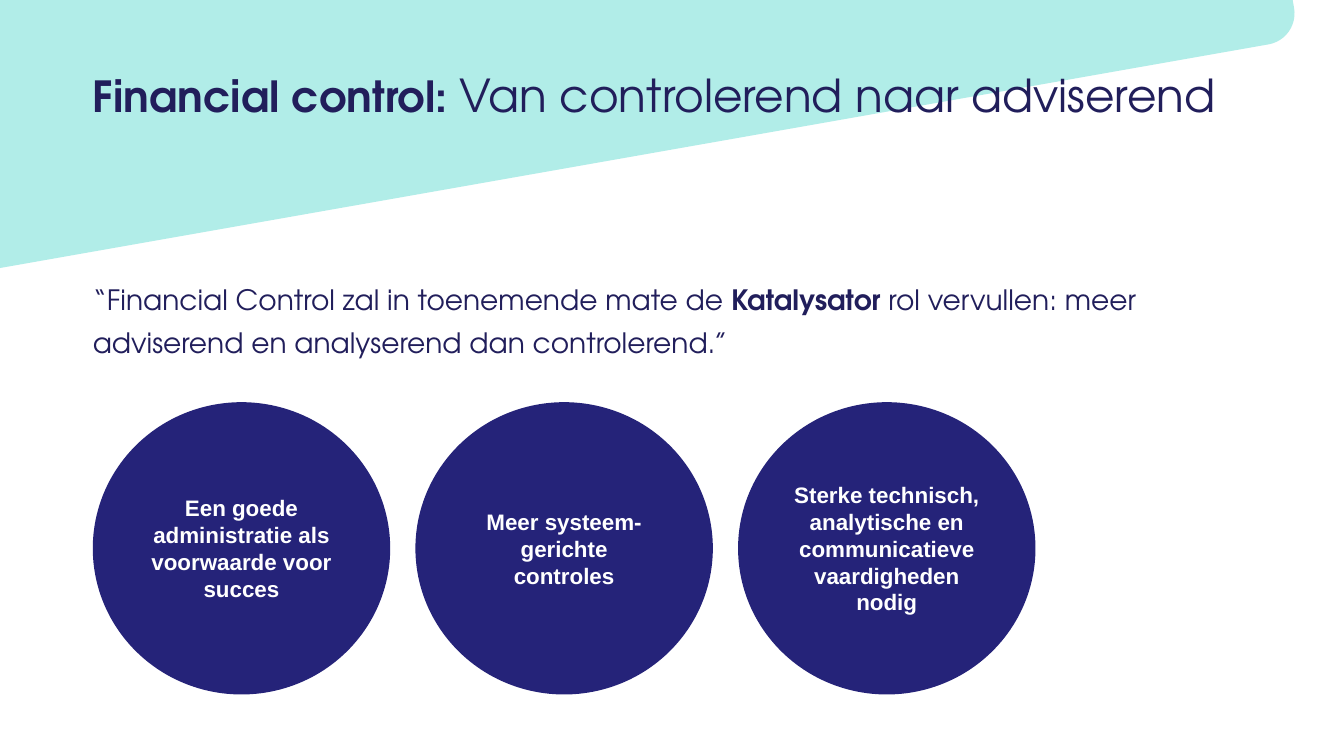
from dataclasses import dataclass

from pptx import Presentation
from pptx.dml.color import RGBColor
from pptx.enum.shapes import MSO_SHAPE
from pptx.enum.text import MSO_ANCHOR, PP_ALIGN
from pptx.util import Inches, Pt


@dataclass(frozen=True)
class Theme:
    band: str = "B1EDE8"
    ink: str = "211E5B"
    circle: str = "252379"
    white: str = "FFFFFF"
    heading_font: str = "TeX Gyre Adventor"
    circle_font: str = "Arial"
    title_bold: float = 30.6
    title_light: float = 32.4
    quote: float = 20
    label: float = 16


THEME = Theme()


def add_run(p, text, *, size, color=THEME.ink, font=THEME.heading_font, bold=False):
    r = p.add_run()
    r.text = text
    r.font.size = Pt(size)
    r.font.name = font
    r.font.bold = bold
    r.font.color.rgb = RGBColor.from_string(color)


def add_filled(slide, kind, box, color):
    sp = slide.shapes.add_shape(kind, *map(Inches, box))
    sp.shadow.inherit = False
    sp.fill.solid()
    sp.fill.fore_color.rgb = RGBColor.from_string(color)
    sp.line.fill.background()
    return sp


def add_paragraph_box(slide, box):
    tf = slide.shapes.add_textbox(*map(Inches, box)).text_frame
    tf.word_wrap = True
    tf.margin_left = tf.margin_right = tf.margin_top = tf.margin_bottom = 0
    return tf.paragraphs[0]


def add_band(slide, box):
    sp = add_filled(slide, MSO_SHAPE.ROUNDED_RECTANGLE, box, THEME.band)
    sp.adjustments[0] = 0.117
    sp.rotation = 350


def add_title(slide, box):
    p = add_paragraph_box(slide, box)
    add_run(p, "Financial control: ", size=THEME.title_bold, bold=True)
    add_run(p, "Van controlerend naar adviserend", size=THEME.title_light)


def add_quote(slide, box):
    p = add_paragraph_box(slide, box)
    p.line_spacing = 1.3
    add_run(p, "“Financial Control zal in toenemende mate de ", size=THEME.quote)
    add_run(p, "Katalysator", size=THEME.quote, bold=True)
    add_run(
        p,
        " rol vervullen: meer adviserend en analyserend dan controlerend.”",
        size=THEME.quote,
    )


def add_circles(slide, box, labels, gap=0.25):
    left, top, width, height = box
    diameter = (width - gap * (len(labels) - 1)) / len(labels)
    for i, label in enumerate(labels):
        circle_box = (left + i * (diameter + gap), top, diameter, height)
        sp = add_filled(slide, MSO_SHAPE.OVAL, circle_box, THEME.circle)
        tf = sp.text_frame
        tf.word_wrap = True
        tf.vertical_anchor = MSO_ANCHOR.MIDDLE
        p = tf.paragraphs[0]
        p.alignment = PP_ALIGN.CENTER
        add_run(p, label, size=THEME.label, color=THEME.white,
                font=THEME.circle_font, bold=True)


def main():
    prs = Presentation()
    prs.slide_width = Inches(13.33)
    prs.slide_height = Inches(7.5)
    slide = prs.slides.add_slide(prs.slide_layouts[6])
    add_band(slide, (-0.75, -1.09, 13.51, 2.67))
    add_title(slide, (0.92, 0.67, 11.25, 1.32))
    add_quote(slide, (0.92, 2.7, 11.25, 1.1))
    add_circles(slide, (0.92, 3.99, 9.35, 2.9), [
        "Een goede administratie als voorwaarde voor succes",
        "Meer systeem- gerichte controles",
        "Sterke technisch, analytische en communicatieve vaardigheden nodig",
    ])
    prs.save("out.pptx")


if __name__ == "__main__":
    main()
